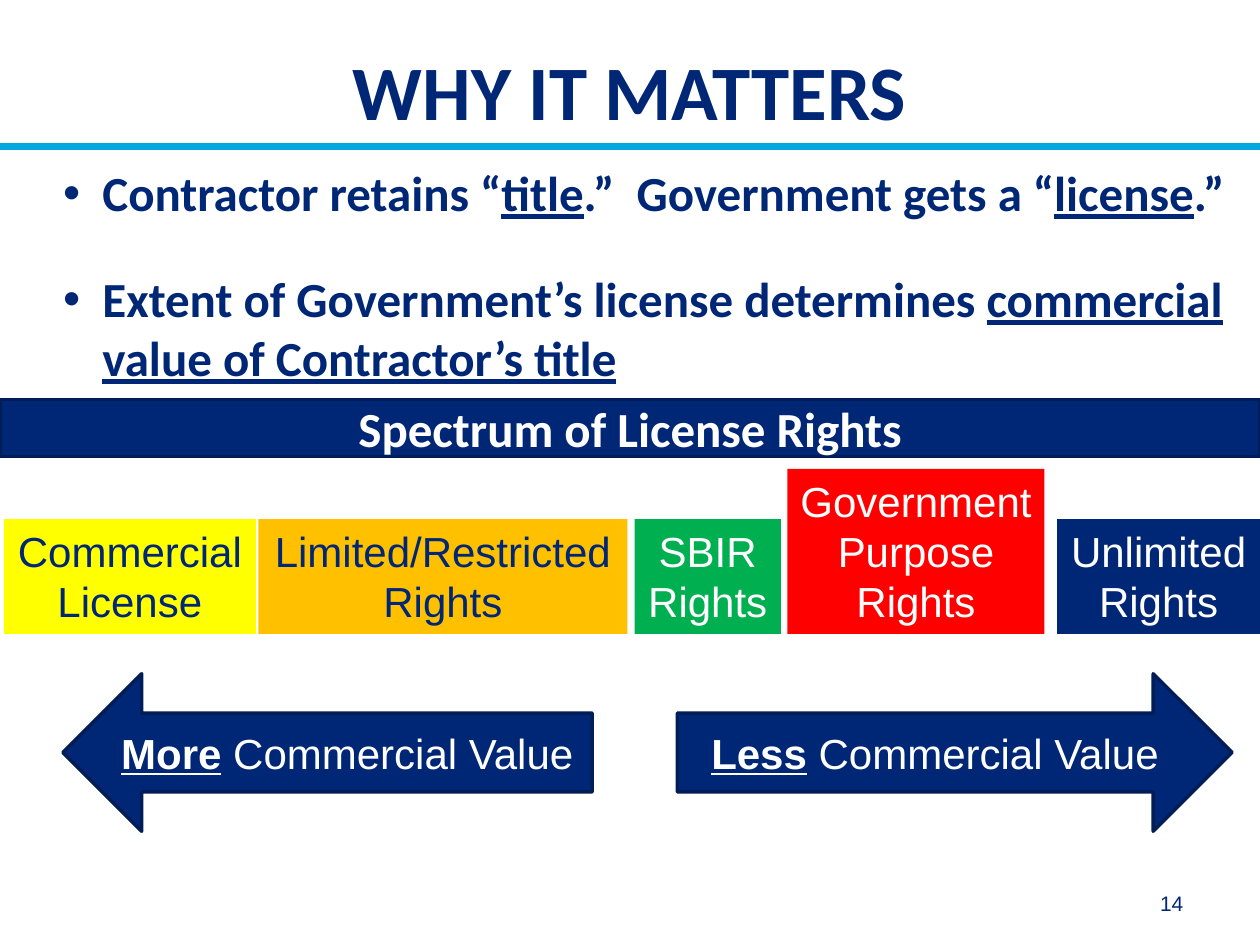
from dataclasses import dataclass
from typing import Any, NamedTuple

from lxml import etree
from pptx import Presentation
from pptx.dml.color import RGBColor
from pptx.enum.shapes import MSO_CONNECTOR, MSO_SHAPE
from pptx.enum.text import MSO_ANCHOR, MSO_AUTO_SIZE, PP_ALIGN
from pptx.oxml.ns import qn
from pptx.util import Pt

RECTANGLE = MSO_SHAPE.RECTANGLE
LEFT_ARROW, RIGHT_ARROW = MSO_SHAPE.LEFT_ARROW, MSO_SHAPE.RIGHT_ARROW
STRAIGHT = MSO_CONNECTOR.STRAIGHT
TOP, MIDDLE, BOTTOM = MSO_ANCHOR.TOP, MSO_ANCHOR.MIDDLE, MSO_ANCHOR.BOTTOM
NO_FIT, GROW = MSO_AUTO_SIZE.NONE, MSO_AUTO_SIZE.SHAPE_TO_FIT_TEXT
LEFT, CENTER, RIGHT = PP_ALIGN.LEFT, PP_ALIGN.CENTER, PP_ALIGN.RIGHT


@dataclass(frozen=True)
class Theme:
    navy: str = "002776"
    outline: str = "001D57"
    rule: str = "00A9E0"
    white: str = "FFFFFF"
    yellow: str = "FFFF00"
    amber: str = "FFC000"
    green: str = "00B050"
    red: str = "FF0000"
    heading_font: str = "Calibri"
    label_font: str = "Arial"
    title_size: float = 44
    body_size: float = 28
    label_size: float = 24
    number_size: float = 12


THEME = Theme()


class Box(NamedTuple):
    left: float
    top: float
    width: float
    height: float


class Style(NamedTuple):
    font: str
    size: float
    color: str
    bold: bool = False


class Span(NamedTuple):
    text: str
    format: dict[str, bool] = {}


class Right(NamedTuple):
    words: tuple[str, ...]
    left: float
    width: float
    fill: str
    color: str
    wrap: bool = True


class ValueArrow(NamedTuple):
    outline: MSO_SHAPE
    box: Box
    emphasis: str


UNDERLINED = {"underline": True}
STRONG = {"underline": True, "bold": True}

BULLETS = [
    ([Span("Contractor retains “"), Span("title", UNDERLINED),
      Span(".”  Government gets a “"), Span("license", UNDERLINED), Span(".”")],
     {"space_before": Pt(0), "space_after": Pt(24)}),
    ([Span("Extent of Government’s license determines "),
      Span("commercial value of Contractor’s title", UNDERLINED)],
     {"space_before": Pt(3), "space_after": Pt(12)}),
]

RIGHTS_BOTTOM = 362.2
RIGHTS = [
    Right(("Commercial", "License"), 2.2, 144, THEME.yellow, THEME.navy),
    Right(("Limited/Restricted", "Rights"), 147.6, 211, THEME.amber, THEME.navy),
    Right(("SBIR", "Rights"), 362.7, 83.5, THEME.green, THEME.white, False),
    Right(("Government", "Purpose", "Rights"), 450, 146.9, THEME.red, THEME.white),
    Right(("Unlimited", "Rights"), 604.1, 115.9, THEME.navy, THEME.white, False),
]

ARROWS = [
    ValueArrow(RIGHT_ARROW, Box(387, 385, 317, 90), "Less"),
    ValueArrow(LEFT_ARROW, Box(36, 385, 302.4, 90), "More"),
]


def apply(target: Any, values: dict[str, Any]) -> None:
    for name, value in values.items():
        setattr(target, name, value)


def place(shape: Any, box: Box) -> None:
    apply(shape, {name: Pt(value) for name, value in box._asdict().items()})


def write(paragraph: Any, spans: list[Span], style: Style, align: PP_ALIGN) -> None:
    paragraph.alignment = align
    for span in spans:
        run = paragraph.add_run()
        run.text = span.text
        apply(run.font, {"name": style.font, "size": Pt(style.size),
                         "bold": style.bold, **span.format})
        run.font.color.rgb = RGBColor.from_string(style.color)


def paragraph_at(frame: Any, index: int) -> Any:
    return frame.add_paragraph() if index else frame.paragraphs[0]


def add_block(slide: Any, outline: MSO_SHAPE, box: Box, fill: str, border: str | None = None) -> Any:
    block = slide.shapes.add_shape(outline, *map(Pt, box))
    block.shadow.inherit = False
    block.fill.solid()
    block.fill.fore_color.rgb = RGBColor.from_string(fill)
    if border:
        block.line.color.rgb = RGBColor.from_string(border)
        block.line.width = Pt(2)
    else:
        block.line.fill.background()
    return block


def add_rule(slide: Any) -> None:
    rule = slide.shapes.add_connector(STRAIGHT, Pt(0), Pt(83.5), Pt(720), Pt(83.5))
    rule.line.color.rgb = RGBColor.from_string(THEME.rule)
    rule.line.width = Pt(4)
    etree.SubElement(rule._element.spPr, qn("a:effectLst"))


def fill_title(title: Any) -> None:
    place(title, Box(36, 10, 648, 71.3))
    apply(title.text_frame, {"vertical_anchor": BOTTOM, "auto_size": NO_FIT,
                             "margin_left": 0, "margin_right": 0})
    style = Style(THEME.heading_font, THEME.title_size, THEME.navy, True)
    write(title.text_frame.paragraphs[0], [Span("WHY IT MATTERS")], style, CENTER)


def fill_bullets(body: Any) -> None:
    place(body, Box(36, 93, 671, 386))
    frame = body.text_frame
    apply(frame, {"vertical_anchor": TOP, "auto_size": NO_FIT, "margin_left": 0,
                  "margin_right": 0, "margin_top": 0, "margin_bottom": 0})
    style = Style(THEME.heading_font, THEME.body_size, THEME.navy, True)
    for index, (spans, spacing) in enumerate(BULLETS):
        paragraph = paragraph_at(frame, index)
        apply(paragraph, spacing)
        properties = paragraph._p.get_or_add_pPr()
        properties.set("marL", str(Pt(22.5)))
        properties.set("indent", str(-Pt(22.5)))
        etree.SubElement(properties, qn("a:buFont"), typeface="Arial")
        etree.SubElement(properties, qn("a:buChar"), char="•")
        write(paragraph, spans, style, LEFT)


def add_right(slide: Any, right: Right) -> None:
    height = 28.8 * len(right.words) + 7.9
    box = Box(right.left, RIGHTS_BOTTOM - height, right.width, height)
    frame = add_block(slide, RECTANGLE, box, right.fill).text_frame
    apply(frame, {"word_wrap": right.wrap, "auto_size": GROW, "vertical_anchor": TOP})
    style = Style(THEME.label_font, THEME.label_size, right.color)
    for index, word in enumerate(right.words):
        write(paragraph_at(frame, index), [Span(word)], style, CENTER)


def add_banner(slide: Any) -> None:
    frame = add_block(slide, RECTANGLE, Box(0, 228.2, 720, 32.7), THEME.navy, THEME.outline).text_frame
    frame.vertical_anchor = MIDDLE
    style = Style(THEME.heading_font, THEME.body_size, THEME.white, True)
    write(frame.paragraphs[0], [Span("Spectrum of License Rights")], style, CENTER)


def add_arrow(slide: Any, arrow: ValueArrow) -> None:
    frame = add_block(slide, arrow.outline, arrow.box, THEME.navy, THEME.outline).text_frame
    frame.vertical_anchor = MIDDLE
    style = Style(THEME.label_font, THEME.label_size, THEME.white)
    spans = [Span(arrow.emphasis, STRONG), Span(" Commercial Value")]
    write(frame.paragraphs[0], spans, style, CENTER)


def add_page_number(slide: Any) -> None:
    frame = slide.shapes.add_textbox(Pt(607.7), Pt(507.6), Pt(75.6), Pt(19.4)).text_frame
    apply(frame, {"word_wrap": True, "vertical_anchor": BOTTOM})
    style = Style(THEME.label_font, THEME.number_size, THEME.navy)
    write(frame.paragraphs[0], [Span("14")], style, RIGHT)


def main() -> None:
    deck = Presentation()
    apply(deck, {"slide_width": Pt(720), "slide_height": Pt(540)})
    slide = deck.slides.add_slide(deck.slide_layouts[1])
    add_rule(slide)
    fill_title(slide.shapes.title)
    fill_bullets(slide.placeholders[1])
    add_page_number(slide)
    for arrow in ARROWS:
        add_arrow(slide, arrow)
    for right in RIGHTS:
        add_right(slide, right)
    add_banner(slide)
    deck.save("out.pptx")


if __name__ == "__main__":
    main()
